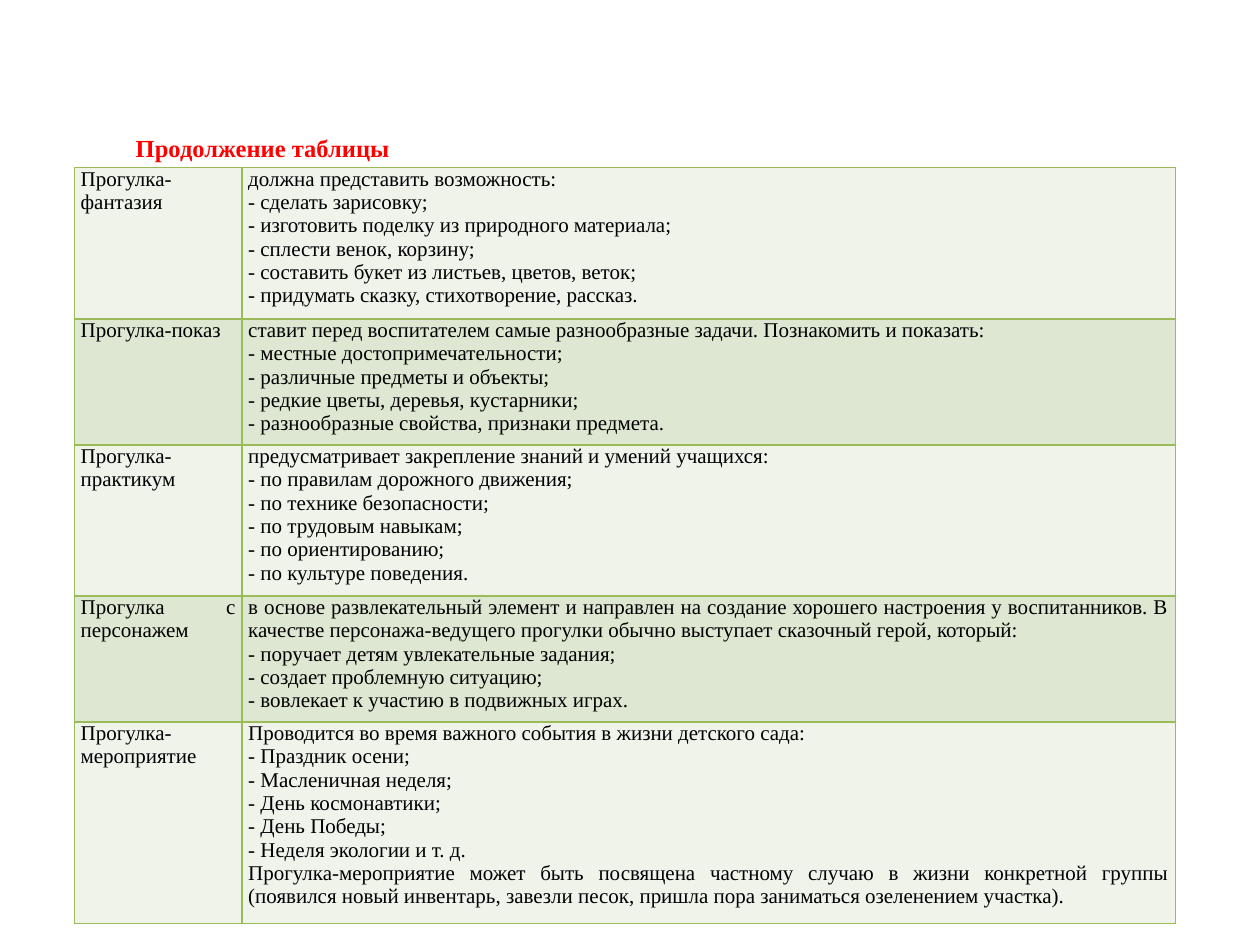
import pptx
import pptx.dml.color
import pptx.enum.text
import pptx.oxml
import pptx.oxml.ns
import pptx.util
from pptx.util import Inches, Pt

RED = pptx.dml.color.RGBColor(0xFF, 0x00, 0x00)
BLACK = pptx.dml.color.RGBColor(0x00, 0x00, 0x00)
GREEN = pptx.dml.color.RGBColor(0x9B, 0xBB, 0x59)
BANDS = (
    pptx.dml.color.RGBColor(0xEF, 0xF3, 0xEA),
    pptx.dml.color.RGBColor(0xDE, 0xE7, 0xD1),
)
FONT = "Times New Roman"
LINE_STEP = 0.2
COLUMN_WIDTHS = (1.33, 7.41)
TABLE_LEFT, TABLE_TOP = 0.59, 1.33

# Kind of walk, number of text lines its row holds, description
WALKS = [
    ("Прогулка-фантазия", 6, [
        "должна представить возможность:",
        "- сделать зарисовку;",
        "- изготовить поделку из природного материала;",
        "- сплести венок, корзину;",
        "- составить букет из листьев, цветов, веток;",
        "- придумать сказку, стихотворение, рассказ.",
    ]),
    ("Прогулка-показ", 5, [
        "ставит перед воспитателем самые разнообразные задачи. "
        "Познакомить и показать:",
        "- местные достопримечательности;",
        "- различные предметы и объекты;",
        "- редкие цветы, деревья, кустарники;",
        "- разнообразные свойства, признаки предмета.",
    ]),
    ("Прогулка-практикум", 6, [
        "предусматривает закрепление знаний и умений учащихся:",
        "- по правилам дорожного движения;",
        "- по технике безопасности;",
        "- по трудовым навыкам;",
        "- по ориентированию;",
        "- по культуре поведения.",
    ]),
    ("Прогулка с персонажем", 5, [
        "в основе развлекательный элемент и направлен на создание хорошего "
        "настроения у воспитанников. В качестве персонажа-ведущего прогулки "
        "обычно выступает сказочный герой, который:",
        "- поручает детям увлекательные задания;",
        "- создает проблемную ситуацию;",
        "- вовлекает к участию в подвижных играх.",
    ]),
    ("Прогулка-мероприятие", 8, [
        "Проводится во время важного события в жизни детского сада:",
        "- Праздник осени;",
        "- Масленичная неделя;",
        "- День космонавтики;",
        "- День Победы;",
        "- Неделя экологии и т. д.",
        "Прогулка-мероприятие может быть посвящена частному случаю в жизни "
        "конкретной группы (появился новый инвентарь, завезли песок, пришла "
        "пора заниматься озеленением участка).",
    ]),
]


def style_paragraph(para, size, color, alignment, bold=False):
    para.alignment = alignment
    para.font.name = FONT
    para.font.size = Pt(size)
    para.font.bold = bold
    para.font.color.rgb = color


def add_title(page, text):
    title = page.shapes.title
    title.left, title.top = Inches(0.91), Inches(0.99)
    title.width, title.height = Inches(2.35), Inches(0.34)
    frame = title.text_frame
    frame.text = text
    frame.word_wrap = True
    frame.auto_size = pptx.enum.text.MSO_AUTO_SIZE.NONE
    frame.vertical_anchor = pptx.enum.text.MSO_ANCHOR.TOP
    para = frame.paragraphs[0]
    para.line_spacing = 1.07
    style_paragraph(para, 14, RED, pptx.enum.text.PP_ALIGN.CENTER, bold=True)


def set_borders(cell, color, width):
    properties = cell._tc.get_or_add_tcPr()
    for side in ("lnL", "lnR", "lnT", "lnB"):
        properties.append(pptx.oxml.parse_xml(
            f'<a:{side} {pptx.oxml.ns.nsdecls("a")} w="{Pt(width)}">'
            f'<a:solidFill><a:srgbClr val="{color}"/></a:solidFill></a:{side}>'
        ))


def fill_cell(cell, lines, color):
    set_borders(cell, GREEN, 1)
    cell.fill.solid()
    cell.fill.fore_color.rgb = color
    cell.margin_left = cell.margin_right = Inches(0.05)
    cell.margin_top = cell.margin_bottom = 0
    cell.text_frame.text = "\n".join(lines)
    for para in cell.text_frame.paragraphs:
        style_paragraph(para, 12, BLACK, pptx.enum.text.PP_ALIGN.JUSTIFY)


def add_walk_table(page):
    height = LINE_STEP * sum(count for _, count, _ in WALKS)
    table = page.shapes.add_table(
        len(WALKS), len(COLUMN_WIDTHS), Inches(TABLE_LEFT), Inches(TABLE_TOP),
        Inches(sum(COLUMN_WIDTHS)), Inches(height),
    ).table
    table.first_row = table.horz_banding = False
    for column, width in zip(table.columns, COLUMN_WIDTHS):
        column.width = Inches(width)
    for index, (name, count, description) in enumerate(WALKS):
        table.rows[index].height = Inches(LINE_STEP * count)
        band = BANDS[index % 2]
        fill_cell(table.cell(index, 0), [name], band)
        fill_cell(table.cell(index, 1), description, band)


def main():
    deck = pptx.Presentation()
    deck.slide_width, deck.slide_height = Inches(10), Inches(7.5)
    page = deck.slides.add_slide(deck.slide_layouts.get_by_name("Title Only"))
    add_title(page, "Продолжение таблицы")
    add_walk_table(page)
    deck.save("out.pptx")


if __name__ == "__main__":
    main()
